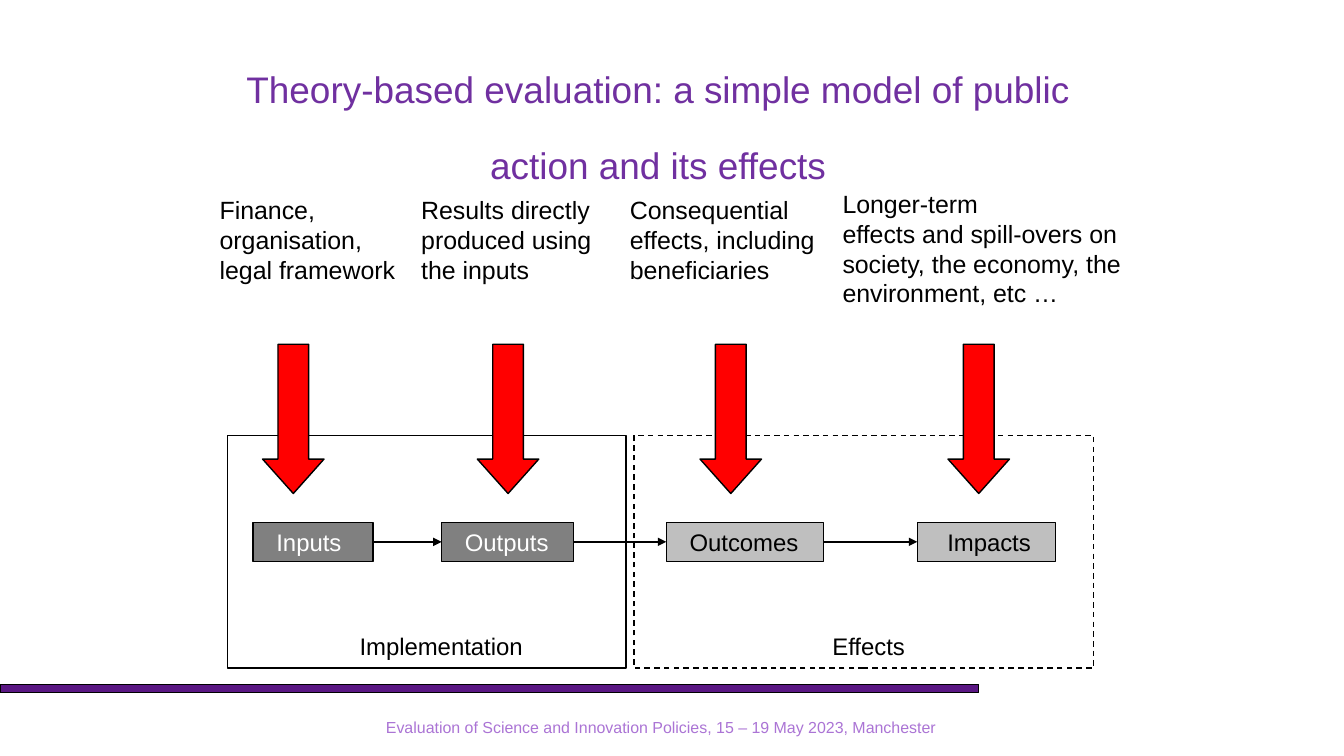
from lxml import etree
from pptx import Presentation
from pptx.dml.color import RGBColor
from pptx.enum.dml import MSO_LINE
from pptx.enum.shapes import MSO_CONNECTOR, MSO_SHAPE
from pptx.enum.text import MSO_ANCHOR, PP_ALIGN
from pptx.oxml.ns import qn
from pptx.util import Pt

BLACK = RGBColor(0x00, 0x00, 0x00)
WHITE = RGBColor(0xFF, 0xFF, 0xFF)
RED = RGBColor(0xFF, 0x00, 0x00)
DARK_GREY = RGBColor(0x80, 0x80, 0x80)
LIGHT_GREY = RGBColor(0xBF, 0xBF, 0xBF)
TITLE_PURPLE = RGBColor(0x70, 0x30, 0xA0)
BAR_PURPLE = RGBColor(0x5A, 0x17, 0x83)
FOOTER_PURPLE = RGBColor(0xAB, 0x74, 0xD5)

TITLE = "Theory-based evaluation: a simple model of public action and its effects"
FOOTER = "Evaluation of Science and Innovation Policies, 15 – 19 May 2023, Manchester"

# paragraphs, left, top, width, height, wrap
EXPLANATIONS = [
    (["Finance,", "organisation,", "legal framework"], 149.8, 135.4, 141.1, 72, False),
    (["Results directly produced using the inputs"], 293.8, 135.4, 136.8, 72, True),
    (["Consequential effects, including", "beneficiaries"], 442.8, 135.4, 152.6, 72, True),
    (["Longer-term", "effects and spill-overs on society, the economy, the environment, etc …"],
     594.7, 131, 215.3, 93.6, True),
]
# name, left, width, text indent, fill, text colour, arrow centre
STAGES = [
    ("Inputs", 180.7, 85.7, 16.7, DARK_GREY, WHITE, 209.5),
    ("Outputs", 315.4, 94.3, 16.7, DARK_GREY, WHITE, 362.9),
    ("Outcomes", 475.9, 112.3, 16.7, LIGHT_GREY, BLACK, 522),
    ("Impacts", 655.2, 98.6, 21.5, LIGHT_GREY, BLACK, 699.1),
]
# label, label left, label width, frame left, frame width, dash
PHASES = [
    ("Implementation", 249.8, 132.5, 162.7, 284.4, None),
    ("Effects", 587.5, 67, 452.9, 328.3, MSO_LINE.DASH),
]
STAGE_TOP, STAGE_H = 373, 28.1
FRAME_TOP, FRAME_H = 311, 166.3
LABEL_TOP = 447.8
ARROW_LENGTH, ARROW_WIDTH, ARROW_MIDDLE = 106.6, 43.9, 299.2

prs = Presentation()
prs.slide_width, prs.slide_height = Pt(960), Pt(540)
slide = prs.slides.add_slide(prs.slide_layouts[5])
shapes = slide.shapes


def write(sp, paragraphs, size, color, align=PP_ALIGN.LEFT, wrap=True):
    tf = sp.text_frame
    tf.text = "\n".join(paragraphs)
    tf.word_wrap = wrap
    for p in tf.paragraphs:
        p.alignment = align
        for r in p.runs:
            r.font.name, r.font.size = "Arial", Pt(size)
            r.font.color.rgb = color
    return tf


def add_text(paragraphs, left, top, width, height, size, color=BLACK, **layout):
    sp = shapes.add_textbox(Pt(left), Pt(top), Pt(width), Pt(height))
    return write(sp, paragraphs, size, color, **layout)


def add_block(kind, left, top, width, height, fill=None, line_width=1):
    sp = shapes.add_shape(kind, Pt(left), Pt(top), Pt(width), Pt(height))
    sp.shadow.inherit = False
    if fill is None:
        sp.fill.background()
    else:
        sp.fill.solid()
        sp.fill.fore_color.rgb = fill
    sp.line.color.rgb = BLACK
    sp.line.width = Pt(line_width)
    return sp


def add_link(x1, x2, y):
    link = shapes.add_connector(MSO_CONNECTOR.STRAIGHT, Pt(x1), Pt(y), Pt(x2), Pt(y))
    link.line.color.rgb = BLACK
    link.line.width = Pt(1)
    etree.SubElement(link.line._get_or_add_ln(), qn("a:tailEnd"), type="triangle")
    etree.SubElement(link._element.spPr, qn("a:effectLst"))


add_block(MSO_SHAPE.FLOWCHART_PROCESS, 0, 488.9, 699.1, 5.8, BAR_PURPLE, 0.75)

title = shapes.title
title.left, title.top, title.width, title.height = Pt(149.8), Pt(69.8), Pt(640.8), Pt(53.3)
tf = write(title, [TITLE], 45.5, TITLE_PURPLE, PP_ALIGN.CENTER)
tf.vertical_anchor = MSO_ANCHOR.MIDDLE
# the title is set as raised, reduced type
tf.paragraphs[0].runs[0].font._element.set("baseline", "30000")

for paragraphs, left, top, width, height, wrap in EXPLANATIONS:
    add_text(paragraphs, left, top, width, height, 17.8, wrap=wrap)

for label, left, width, *_ in PHASES:
    add_text([label], left, LABEL_TOP, width, STAGE_H, 17.1, wrap=False)

for name, left, width, indent, fill, color, _ in STAGES:
    box = add_block(MSO_SHAPE.RECTANGLE, left, STAGE_TOP, width, STAGE_H, fill)
    tf = write(box, [name], 17.1, color)
    tf.margin_left, tf.margin_right = Pt(indent), 0

for start, end in zip(STAGES, STAGES[1:]):
    add_link(start[1] + start[2], end[1], STAGE_TOP + STAGE_H / 2)

for _, _, _, left, width, dash in PHASES:
    frame = add_block(MSO_SHAPE.RECTANGLE, left, FRAME_TOP, width, FRAME_H)
    if dash:
        frame.line.dash_style = dash

for *_, center in STAGES:
    arrow = add_block(MSO_SHAPE.RIGHT_ARROW, center - ARROW_LENGTH / 2,
                      ARROW_MIDDLE - ARROW_WIDTH / 2, ARROW_LENGTH, ARROW_WIDTH, RED)
    arrow.rotation = 90
    arrow.adjustments[0], arrow.adjustments[1] = 0.5, 0.56

tf = add_text([FOOTER], 185.8, 509, 579.6, 28.8, 11.4, FOOTER_PURPLE, align=PP_ALIGN.CENTER)
tf.margin_right = Pt(13.5)

prs.save("out.pptx")
